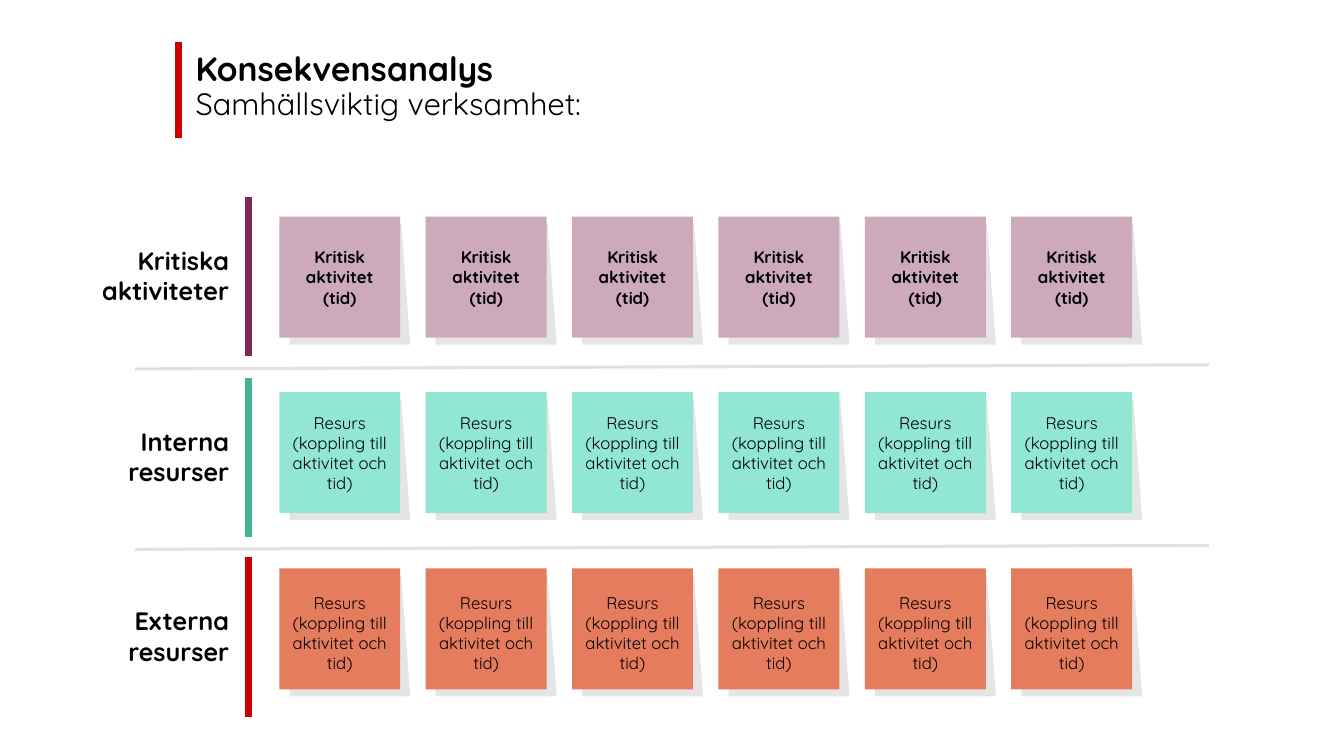
from dataclasses import dataclass

from lxml.etree import SubElement
from pptx import Presentation
from pptx.dml.color import RGBColor
from pptx.enum.shapes import MSO_CONNECTOR as CONN, MSO_SHAPE as SHAPE
from pptx.enum.text import MSO_ANCHOR as ANCHOR, MSO_AUTO_SIZE as AUTO, PP_ALIGN as ALIGN
from pptx.oxml.ns import qn
from pptx.slide import Slide
from pptx.text.text import TextFrame
from pptx.util import Inches, Pt

FONT = "Quicksand"
COLORS = {
    "black": "000000",
    "red": "CC0000",
    "plum": "822757",
    "green": "41B496",
    "pink": "CDA9BC",
    "mint": "92E6D4",
    "orange": "E67C5E",
    "gray": "E2E2E1",
}
NOTE_COUNT = 6
NOTE_LEFT = 2.77
NOTE_STEP = 1.452
NOTE_SIZE = 1.2
INSET = 0.08


@dataclass(frozen=True)
class Line:
    text: str
    size: float
    bold: bool = False


@dataclass(frozen=True)
class Row:
    label: list[str]
    label_top: float
    bar_top: float
    bar_color: str
    note_top: float
    note_color: str
    note_lines: list[str]
    bold: bool = False
    bottom_inset: float = INSET


RESOURCE = ["Resurs", "(koppling till aktivitet och tid)"]
ROWS = [
    Row(["Kritiska aktiviteter"], 2.38, 1.95, "plum", 2.15, "pink",
        ["Kritisk aktivitet", "(tid)"], bold=True),
    Row(["Interna", "resurser"], 4.18, 3.75, "green", 3.89, "mint", RESOURCE),
    Row(["Externa", "resurser"], 5.96, 5.53, "red", 5.64, "orange", RESOURCE, bottom_inset=0),
]


def rgb(name: str) -> RGBColor:
    return RGBColor.from_string(COLORS[name])


def write(tf: TextFrame, lines: list[Line], align: ALIGN, spacing: float = 1.0) -> None:
    tf.word_wrap = True
    for i, line in enumerate(lines):
        p = tf.add_paragraph() if i else tf.paragraphs[0]
        p.alignment = align
        p.line_spacing = spacing
        p.space_before = Pt(0)
        r = p.add_run()
        r.text = line.text
        r.font.name = FONT
        r.font.size = Pt(line.size)
        r.font.bold = line.bold
        r.font.color.rgb = rgb("black")


def add_line(s: Slide, x1: float, y1: float, x2: float, y2: float, color: str, width: float) -> None:
    line = s.shapes.add_connector(CONN.STRAIGHT, Inches(x1), Inches(y1), Inches(x2), Inches(y2))
    line.line.color.rgb = rgb(color)
    line.line.width = Pt(width)
    SubElement(line._element.spPr, qn("a:effectLst"))


def add_title(s: Slide) -> None:
    sp = s.shapes.title
    sp.left, sp.top, sp.width, sp.height = (Inches(v) for v in (1.84, 0.47, 11.2, 0.47))
    tf = sp.text_frame
    tf.auto_size = AUTO.NONE
    tf.vertical_anchor = ANCHOR.TOP
    lines = [Line("Konsekvensanalys", 24, True), Line("Samhällsviktig verksamhet:", 22)]
    write(tf, lines, ALIGN.LEFT, 0.9)
    add_line(s, 1.77, 0.42, 1.77, 1.37, "red", 5)


def add_note_shadow(s: Slide, left: float, top: float) -> None:
    right, bottom = left + NOTE_SIZE, top + NOTE_SIZE
    builder = s.shapes.build_freeform(Inches(left), Inches(top), scale=1.0)
    corners = [(right - 0.09, top), (right, bottom), (left, bottom)]
    builder.add_line_segments([(Inches(x), Inches(y)) for x, y in corners])
    sp = builder.convert_to_shape()
    sp.shadow.inherit = False
    sp.line.fill.background()
    sp.fill.solid()
    sp.fill.fore_color.rgb = rgb("black")
    color = sp._element.spPr.find(qn("a:solidFill")).find(qn("a:srgbClr"))
    SubElement(color, qn("a:alpha"), val="10000")


def add_note(s: Slide, left: float, row: Row) -> None:
    add_note_shadow(s, left + 0.1, row.note_top + 0.07)
    sp = s.shapes.add_shape(SHAPE.RECTANGLE, Inches(left), Inches(row.note_top),
                            Inches(NOTE_SIZE), Inches(NOTE_SIZE))
    sp.shadow.inherit = False
    sp.line.fill.background()
    sp.fill.solid()
    sp.fill.fore_color.rgb = rgb(row.note_color)
    tf = sp.text_frame
    tf.vertical_anchor = ANCHOR.MIDDLE
    tf.margin_left = tf.margin_right = tf.margin_top = Inches(INSET)
    tf.margin_bottom = Inches(row.bottom_inset)
    write(tf, [Line(text, 12, row.bold) for text in row.note_lines], ALIGN.CENTER)


def add_row(s: Slide, row: Row) -> None:
    sp = s.shapes.add_textbox(Inches(0.68), Inches(row.label_top), Inches(1.69), Inches(0.71))
    write(sp.text_frame, [Line(text, 18, True) for text in row.label], ALIGN.RIGHT)
    add_line(s, 2.46, row.bar_top, 2.46, row.bar_top + 1.58, row.bar_color, 5)
    for i in range(NOTE_COUNT):
        add_note(s, NOTE_LEFT + i * NOTE_STEP, row)


def main() -> None:
    prs = Presentation()
    prs.slide_width, prs.slide_height = Inches(13.33), Inches(7.5)
    s = prs.slides.add_slide(prs.slide_layouts[5])
    add_title(s)
    for row in ROWS:
        add_row(s, row)
    for y in (3.66, 5.45):
        add_line(s, 1.34, y, 11.99, y - 0.04, "gray", 2.25)
    prs.save("out.pptx")


if __name__ == "__main__":
    main()
